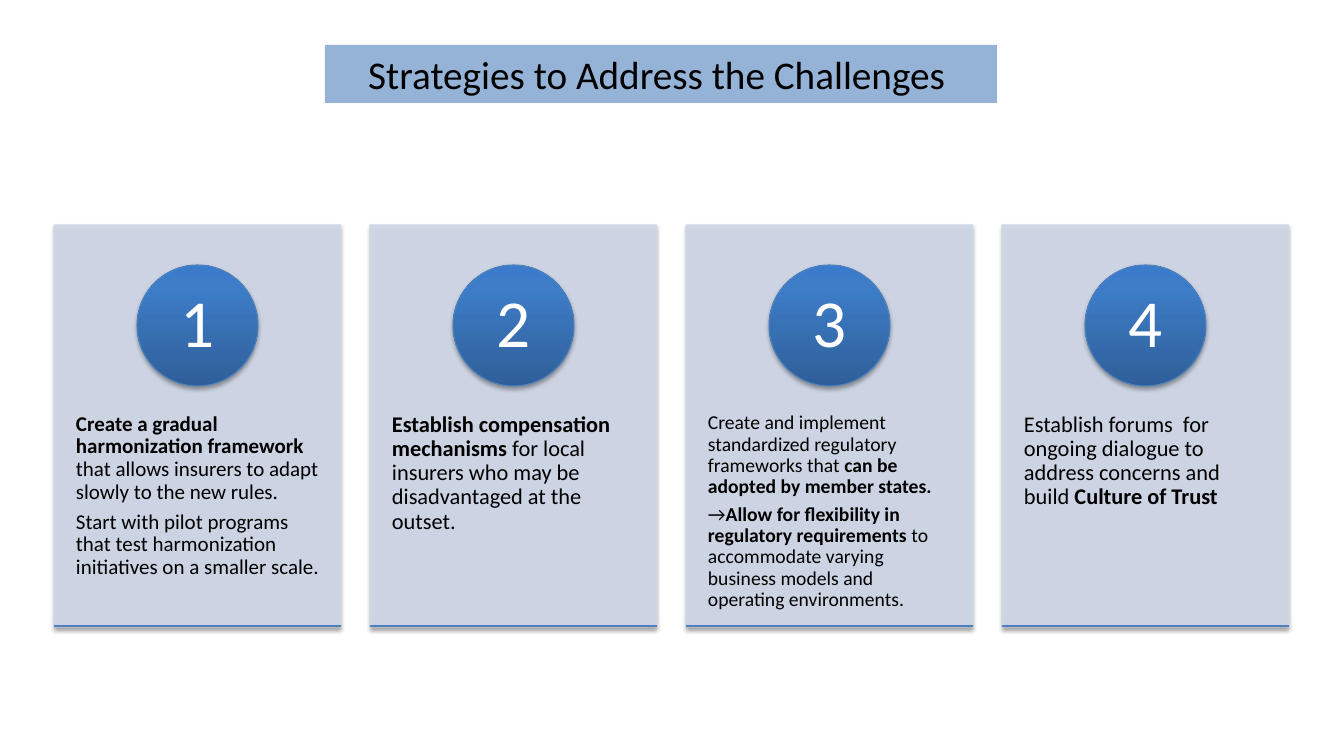
from lxml.etree import SubElement
from pptx import Presentation
from pptx.dml.color import RGBColor
from pptx.enum.shapes import MSO_CONNECTOR, MSO_SHAPE
from pptx.enum.text import MSO_ANCHOR, MSO_AUTO_SIZE, PP_ALIGN
from pptx.oxml.ns import qn
from pptx.util import Emu, Pt

# Content: text size, then paragraphs of (text, bold) runs
TITLE = "Strategies to Address the Challenges "
STRATEGIES = [
    (15, [
        [("Create a gradual harmonization framework ", True),
         ("that allows insurers to adapt slowly to the new rules.", False)],
        [("Start with pilot programs that test harmonization initiatives "
          "on a smaller scale.", False)],
    ]),
    (16, [
        [("Establish compensation mechanisms ", True),
         ("for local insurers who may be disadvantaged at the outset.", False)],
    ]),
    (14, [
        [("Create and implement standardized regulatory frameworks that ", False),
         ("can be adopted by member states.", True)],
        [("→", False),
         ("Allow for flexibility in regulatory requirements", True),
         (" to accommodate varying business models and operating environments.",
          False)],
    ]),
    (16, [
        [("Establish forums  for ongoing dialogue to address concerns and build ",
          False),
         ("Culture of Trust", True)],
    ]),
]

BLACK = RGBColor(0x00, 0x00, 0x00)
WHITE = RGBColor(0xFF, 0xFF, 0xFF)
TITLE_BLUE = RGBColor(0x95, 0xB3, 0xD7)
CARD_BLUE = RGBColor(0xD0, 0xD8, 0xE8)
LINE_BLUE = RGBColor(0x4F, 0x81, 0xBD)
# Gradient runs from the bottom of the circle to its top
CIRCLE_STOPS = [
    (0, RGBColor(0x2F, 0x5F, 0x99)),
    (80, RGBColor(0x3D, 0x7C, 0xC7)),
    (100, RGBColor(0x3A, 0x7C, 0xCB)),
]

# Layout in px
SLIDE_W, SLIDE_H = 1344, 756
CARD_LEFT, CARD_TOP, CARD_W, CARD_H, CARD_PITCH = 54, 225, 287, 402, 316
CIRCLE_TOP, CIRCLE_D = 265, 121
NUMBER_D = 86
BODY_TOP, BODY_H = 377, 241


def px(length):
    return Emu(round(length * 914400 / 100.8))


def box(*lengths):
    return [px(length) for length in lengths]


def set_all(target, values):
    for name, value in values.items():
        setattr(target, name, value)


def add_color(parent, color, alpha=None):
    node = SubElement(parent, qn("a:srgbClr"), val=str(color))
    if alpha is not None:
        SubElement(node, qn("a:alpha"), val=str(alpha * 1000))


def add_shadow(part):
    effects = SubElement(part.element.spPr, qn("a:effectLst"))
    outer = SubElement(effects, qn("a:outerShdw"), blurRad="40000", dist="23000",
                       dir="5400000", rotWithShape="0")
    add_color(outer, BLACK, 35)


def outline(part, color):
    part.line.color.rgb = color
    part.line.width = Pt(0.75)


def write(frame, paragraphs, size, color, align=PP_ALIGN.LEFT, spacing=None):
    for index, runs in enumerate(paragraphs):
        paragraph = frame.add_paragraph() if index else frame.paragraphs[0]
        paragraph.alignment = align
        if spacing:
            set_all(paragraph, {"line_spacing": spacing,
                                "space_after": Pt(0.35 * size)})
        for text, bold in runs:
            run = paragraph.add_run()
            run.text = text
            set_all(run.font, {"name": "Calibri", "size": Pt(size), "bold": bold})
            run.font.color.rgb = color


def add_text(slide, place, inset_x, inset_y, anchor):
    frame = slide.shapes.add_textbox(*place).text_frame
    set_all(frame, {
        "word_wrap": True, "vertical_anchor": anchor,
        "margin_left": px(inset_x), "margin_right": px(inset_x),
        "margin_top": px(inset_y), "margin_bottom": px(inset_y),
    })
    return frame


def add_card(slide, left):
    card = slide.shapes.add_shape(
        MSO_SHAPE.RECTANGLE, *box(left, CARD_TOP, CARD_W, CARD_H))
    card.fill.solid()
    card.fill.fore_color.rgb = CARD_BLUE
    outline(card, CARD_BLUE)
    for tint in card.element.spPr.iter(qn("a:srgbClr")):
        SubElement(tint, qn("a:alpha"), val="90000")
    add_shadow(card)


def add_circle(slide, center):
    circle = slide.shapes.add_shape(
        MSO_SHAPE.OVAL,
        *box(center - CIRCLE_D / 2, CIRCLE_TOP, CIRCLE_D, CIRCLE_D))
    gradient = SubElement(circle.element.spPr, qn("a:gradFill"), rotWithShape="1")
    stops = SubElement(gradient, qn("a:gsLst"))
    for position, color in CIRCLE_STOPS:
        add_color(SubElement(stops, qn("a:gs"), pos=str(position * 1000)), color)
    SubElement(gradient, qn("a:lin"), ang="16200000", scaled="0")
    outline(circle, LINE_BLUE)
    add_shadow(circle)


def add_strategy(slide, index, size, paragraphs):
    left = CARD_LEFT + index * CARD_PITCH
    center = left + CARD_W / 2
    add_card(slide, left)

    # Description
    body = add_text(slide, box(left, BODY_TOP, CARD_W, BODY_H), 22, 36,
                    MSO_ANCHOR.TOP)
    write(body, paragraphs, size, BLACK, spacing=0.9)

    # Numbered circle
    add_circle(slide, center)
    number_top = CIRCLE_TOP + (CIRCLE_D - NUMBER_D) / 2
    number = add_text(
        slide, box(center - NUMBER_D / 2, number_top, NUMBER_D, NUMBER_D), 9, 1,
        MSO_ANCHOR.MIDDLE)
    write(number, [[(str(index + 1), False)]], 48, WHITE, PP_ALIGN.CENTER, 0.9)

    # Rule along the card's lower edge
    bottom = CARD_TOP + CARD_H - 1
    rule = slide.shapes.add_connector(
        MSO_CONNECTOR.STRAIGHT, *box(left, bottom, left + CARD_W, bottom))
    outline(rule, LINE_BLUE)
    add_shadow(rule)


def main():
    deck = Presentation()
    set_all(deck, {"slide_width": px(SLIDE_W), "slide_height": px(SLIDE_H)})
    slide = deck.slides.add_slide(deck.slide_layouts[6])

    for index, (size, paragraphs) in enumerate(STRATEGIES):
        add_strategy(slide, index, size, paragraphs)

    # Title band
    title = slide.shapes.add_shape(MSO_SHAPE.RECTANGLE, *box(325, 45, 672, 58))
    title.shadow.inherit = False
    title.fill.solid()
    title.fill.fore_color.rgb = TITLE_BLUE
    title.line.fill.background()
    set_all(title.text_frame, {"word_wrap": True,
                               "vertical_anchor": MSO_ANCHOR.TOP,
                               "auto_size": MSO_AUTO_SIZE.SHAPE_TO_FIT_TEXT})
    write(title.text_frame, [[(TITLE, False)]], 28, BLACK, PP_ALIGN.CENTER)

    deck.save("out.pptx")


if __name__ == "__main__":
    main()
